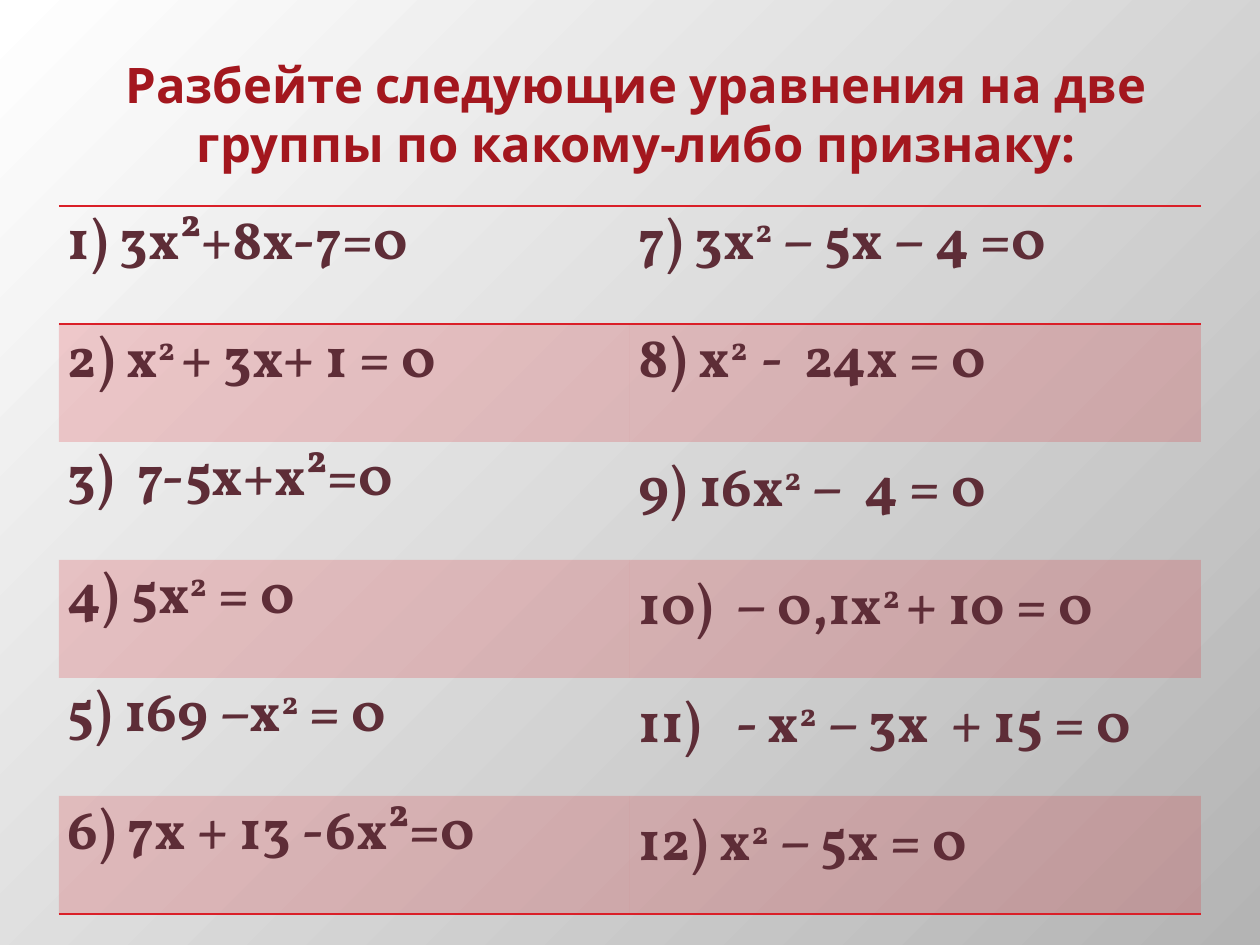
from dataclasses import dataclass

from lxml.etree import SubElement
from pptx import Presentation
from pptx.dml.color import RGBColor
from pptx.enum.text import MSO_ANCHOR as Anchor, PP_ALIGN as Align
from pptx.oxml import parse_xml
from pptx.oxml.ns import nsdecls, qn
from pptx.util import Pt

EMU_PER_PX = 914400 / 126
COLORS = {
    "light": "FFFFFF",
    "shade": "B4B4B4",
    "title": "A3171E",
    "equation": "5E2D37",
    "accent": "DA1F28",
}
NO_STYLE = "{2D5ABB26-0587-4C30-8999-92F81FD0307C}"
BAND_OPACITY = 20


@dataclass(frozen=True)
class Box:
    left: int
    top: int
    width: int
    height: int

    def emu(self) -> tuple:
        return tuple(px(n) for n in (self.left, self.top, self.width, self.height))


@dataclass(frozen=True)
class Equation:
    text: str
    spacing: float = 1.0


TITLE = "Разбейте следующие уравнения на две группы по какому-либо признаку:"
TITLE_BOX = Box(69, 49, 1134, 129)
TABLE_BOX = Box(59, 206, 1142, 708)
EQUATIONS = [
    (Equation("1) 3х²+8х-7=0"), Equation("7) 3х^2^ – 5х – 4 =0")),
    (Equation("2) х^2 ^+ 3х+ 1 = 0"), Equation("8) х^2  ^-  24x = 0")),
    (Equation("3)  7-5х+х²=0"), Equation("9) 16х^2^ –  4 = 0", 1.15)),
    (Equation("4) 5х^2^ = 0"), Equation("10)  – 0,1х^2 ^+ 10 = 0", 1.15)),
    (Equation("5) 169 –х^2^ = 0"), Equation("11)   - x^2^ – 3x  + 15 = 0", 1.15)),
    (Equation("6) 7х + 13 -6х²=0"), Equation("12) x^2^ – 5x = 0", 1.15)),
]


def px(length: int) -> int:
    return round(length * EMU_PER_PX)


def color(name: str) -> RGBColor:
    return RGBColor.from_string(COLORS[name])


def set_font(paragraph, face: str, size: int, color_name: str) -> None:
    font = paragraph.font
    font.name, font.size, font.bold = face, Pt(size), True
    font.color.rgb = color(color_name)


def paint_background(slide) -> None:
    fill = slide.background.fill
    fill.gradient()
    for stop, position, name in zip(fill.gradient_stops, (0, 1), ("light", "shade")):
        stop.position = position
        stop.color.rgb = color(name)
    gradient = slide.element.find(".//" + qn("a:gradFill"))
    gradient.replace(
        gradient.find(qn("a:lin")),
        parse_xml(
            f'<a:path {nsdecls("a")} path="circle">'
            '<a:fillToRect r="100000" b="100000"/></a:path>'
        ),
    )


def add_title(slide) -> None:
    frame = slide.shapes.add_textbox(*TITLE_BOX.emu()).text_frame
    frame.word_wrap = True
    frame.vertical_anchor = Anchor.MIDDLE
    heading = frame.paragraphs[0]
    heading.text = TITLE
    heading.alignment = Align.CENTER
    set_font(heading, "Noto Sans", 28, "title")


def set_borders(cell, ruled: str) -> None:
    properties = cell._tc.get_or_add_tcPr()
    for index, side in enumerate("LRTB"):
        paint = (
            f'<a:solidFill><a:srgbClr val="{COLORS["accent"]}"/></a:solidFill>'
            if side in ruled
            else "<a:noFill/>"
        )
        border = f'<a:ln{side} {nsdecls("a")} w="{Pt(1)}">{paint}</a:ln{side}>'
        properties.insert(index, parse_xml(border))


def fill_band(cell, banded: bool) -> None:
    if not banded:
        cell.fill.background()
        return
    cell.fill.solid()
    cell.fill.fore_color.rgb = color("accent")
    tint = cell._tc.tcPr.find(qn("a:solidFill")).find(qn("a:srgbClr"))
    SubElement(tint, qn("a:alpha"), val=str(BAND_OPACITY * 1000))


def write_equation(cell, equation: Equation) -> None:
    cell.margin_left = cell.margin_right = px(9)
    cell.margin_top = cell.margin_bottom = 0
    line = cell.text_frame.paragraphs[0]
    if equation.spacing != 1:
        line.line_spacing = equation.spacing
    for index, part in enumerate(equation.text.split("^")):
        run = line.add_run()
        run.text = part
        if index % 2:
            run._r.get_or_add_rPr().set("baseline", "30000")
    set_font(line, "Vollkorn", 32, "equation")


def add_equations(slide) -> None:
    last = len(EQUATIONS) - 1
    table = slide.shapes.add_table(len(EQUATIONS), 2, *TABLE_BOX.emu()).table
    table.first_row = table.horz_banding = False
    table._tbl.tblPr.find(qn("a:tableStyleId")).text = NO_STYLE
    for row, pair in enumerate(EQUATIONS):
        ruled = "TB" if row == 0 else "B" if row == last else ""
        ruled += "T" if row == 1 else ""
        for column, equation in enumerate(pair):
            cell = table.cell(row, column)
            write_equation(cell, equation)
            fill_band(cell, row % 2 == 1)
            set_borders(cell, ruled)


def main() -> None:
    deck = Presentation()
    deck.slide_width, deck.slide_height = px(1260), px(945)
    slide = deck.slides.add_slide(deck.slide_layouts[6])
    paint_background(slide)
    add_title(slide)
    add_equations(slide)
    deck.save("out.pptx")


if __name__ == "__main__":
    main()
